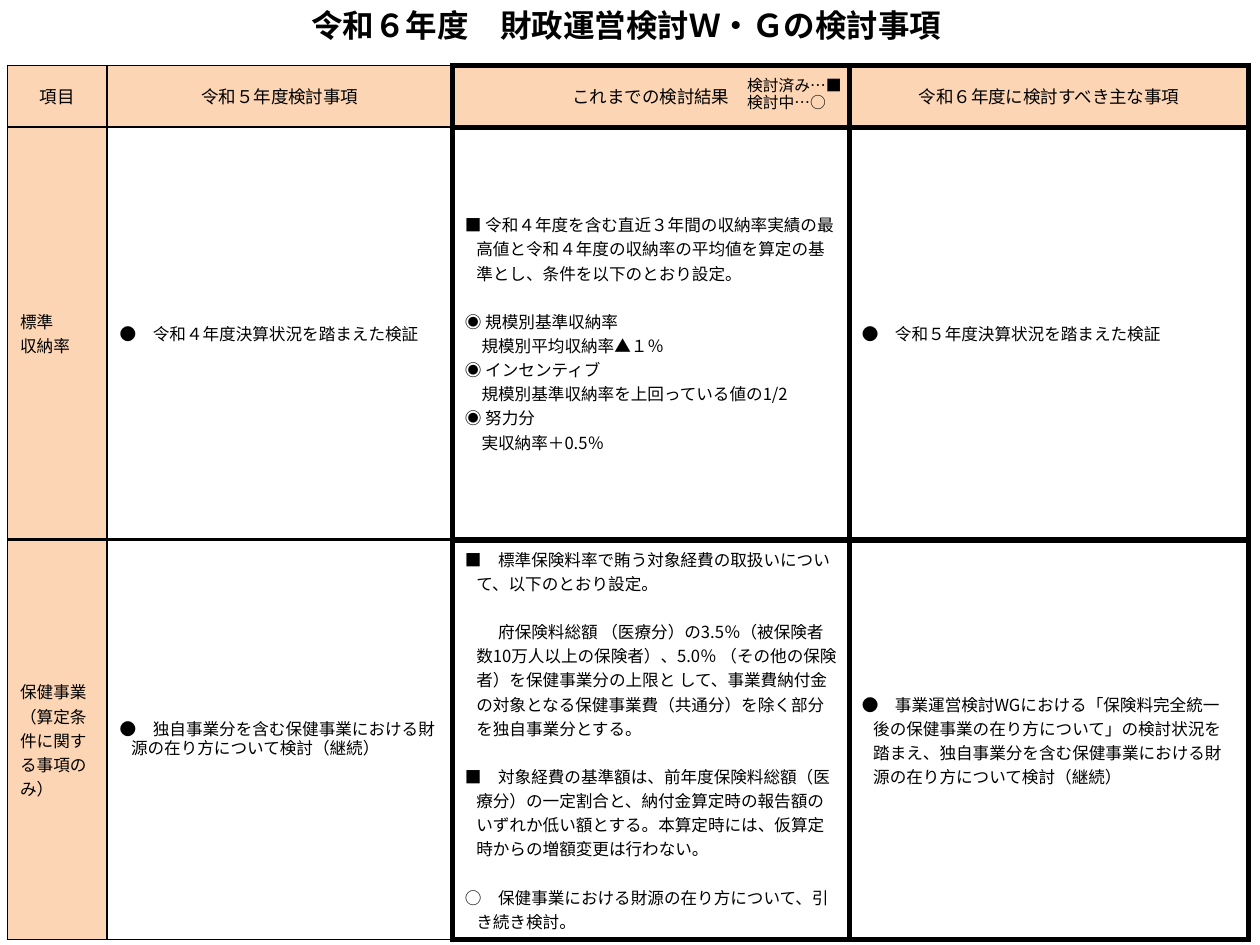
from lxml.etree import SubElement
from pptx import Presentation
from pptx.dml.color import RGBColor
from pptx.enum.text import MSO_ANCHOR, MSO_AUTO_SIZE, PP_ALIGN
from pptx.oxml.ns import qn
from pptx.util import Pt

FONT = "Noto Sans CJK JP"
BLACK = RGBColor(0x00, 0x00, 0x00)
PEACH = RGBColor(0xFC, 0xD5, 0xB5)
THIN, THICK = 1, 3
BODY_SIZE = 9.5
HANGING = 6.5
BLANK_LINE = 13.75

TITLE = "令和６年度　財政運営検討Ｗ・Ｇの検討事項"
LEGEND = ["検討済み…■", "検討中…○"]
HEADERS = ["項目", "令和５年度検討事項", "これまでの検討結果", "令和６年度に検討すべき主な事項"]

# A paragraph is its text, or its text with a dict of format changes.
GAP = {"space_before": BLANK_LINE}
DETAIL = {"first_line": 3}
COLLECTION_RATE = [
    ["標準", "収納率"],
    ["●　令和４年度決算状況を踏まえた検証"],
    [
        "■ 令和４年度を含む直近３年間の収納率実績の最高値と令和４年度の収納率の平均値を算定の基準とし、条件を以下のとおり設定。",
        ("◉ 規模別基準収納率", GAP),
        ("規模別平均収納率▲１％", DETAIL),
        "◉ インセンティブ",
        ("規模別基準収納率を上回っている値の1/2", DETAIL),
        "◉ 努力分",
        ("実収納率＋0.5％", DETAIL),
    ],
    ["●　令和５年度決算状況を踏まえた検証"],
]
HEALTH_PROGRAMS = [
    ["保健事業", "（算定条件に関する事項のみ）"],
    [("●　独自事業分を含む保健事業における財源の在り方について検討（継続）", {"line_spacing": 11})],
    [
        "■　標準保険料率で賄う対象経費の取扱いについて、以下のとおり設定。",
        ("府保険料総額 （医療分）の3.5％（被保険者数10万人以上の保険者）、5.0％ （その他の保険者）を"
         "保健事業分の上限と して、事業費納付金の対象となる保健事業費（共通分）を除く部分を独自事業分とする。",
         {"first_line": 12.5, **GAP}),
        ("■　対象経費の基準額は、前年度保険料総額（医療分）の一定割合と、納付金算定時の報告額の"
         "いずれか低い額とする。本算定時には、仮算定時からの増額変更は行わない。", GAP),
        ("○　保健事業における財源の在り方について、引き続き検討。", GAP),
    ],
    ["●　事業運営検討WGにおける「保険料完全統一後の保健事業の在り方について」の検討状況を踏まえ、"
     "独自事業分を含む保健事業における財源の在り方について検討（継続）"],
]

TABLE_LEFT = 4.3
COLUMN_WIDTHS = [56.9, 197.3, 226.8, 228.2]
TABLES = [
    {"top": 37.4, "row_heights": [35.3, 235.4], "rows": [[[text] for text in HEADERS], COLLECTION_RATE]},
    {"top": 308.9, "row_heights": [189.4], "rows": [HEALTH_PROGRAMS]},
]


def write_paragraph(paragraph, text, size=BODY_SIZE, bold=False, align=PP_ALIGN.LEFT,
                    margin=0, first_line=0, space_before=0, line_spacing=None):
    properties = paragraph._p.get_or_add_pPr()
    properties.set("marL", str(Pt(margin)))
    properties.set("indent", str(Pt(first_line)))
    paragraph.alignment = align
    paragraph.space_before = Pt(space_before)
    if line_spacing:
        paragraph.line_spacing = Pt(line_spacing)
    run = paragraph.add_run()
    run.text = text
    run.font.size = Pt(size)
    run.font.bold = bold
    run.font.color.rgb = BLACK
    run.font.name = FONT
    SubElement(run._r.get_or_add_rPr(), qn("a:ea"), typeface=FONT)


def write_text(frame, items, **text_format):
    frame.vertical_anchor = MSO_ANCHOR.MIDDLE
    frame.word_wrap = True
    for index, item in enumerate(items):
        text, changes = (item, {}) if isinstance(item, str) else item
        paragraph = frame.add_paragraph() if index else frame.paragraphs[0]
        write_paragraph(paragraph, text, **{**text_format, **changes})


def set_borders(cell, widths):
    """Draw black borders; widths maps each side (L, R, T, B) to points."""
    properties = cell._tc.get_or_add_tcPr()
    for side in "LRTB":
        line = SubElement(properties, qn(f"a:ln{side}"), w=str(Pt(widths[side])))
        fill = SubElement(line, qn("a:solidFill"))
        SubElement(fill, qn("a:srgbClr"), val=str(BLACK))


def format_cell(cell, items, column, is_header):
    widths = dict.fromkeys("LRTB", THIN if column < 2 else THICK)
    if column == 1:
        widths["R"] = THICK
    set_borders(cell, widths)
    if is_header or column == 0:
        cell.fill.solid()
        cell.fill.fore_color.rgb = PEACH
    else:
        cell.fill.background()
    if is_header:
        text_format = {"size": 10, "align": PP_ALIGN.CENTER}
    elif column:
        text_format = {"margin": HANGING, "first_line": -HANGING}
    else:
        text_format = {}
    write_text(cell.text_frame, items, **text_format)
    cell.vertical_anchor = MSO_ANCHOR.MIDDLE


def add_review_table(slide, top, row_heights, rows):
    table = slide.shapes.add_table(
        len(rows), len(COLUMN_WIDTHS), Pt(TABLE_LEFT), Pt(top),
        Pt(sum(COLUMN_WIDTHS)), Pt(sum(row_heights))).table
    table.first_row = False
    table.horz_banding = False
    for column, width in zip(table.columns, COLUMN_WIDTHS):
        column.width = Pt(width)
    for row_index, (height, row) in enumerate(zip(row_heights, rows)):
        table.rows[row_index].height = Pt(height)
        for column_index, items in enumerate(row):
            is_header = items[0] in HEADERS
            format_cell(table.cell(row_index, column_index), items, column_index, is_header)


def main():
    presentation = Presentation()
    presentation.slide_width, presentation.slide_height = Pt(720), Pt(540)
    slide = presentation.slides.add_slide(presentation.slide_layouts[5])

    title = slide.shapes.title
    title.left, title.top, title.width, title.height = Pt(3.6), Pt(-4.3), Pt(708.5), Pt(36.7)
    write_text(title.text_frame, [TITLE], size=18, bold=True, align=PP_ALIGN.CENTER)
    title.text_frame.auto_size = MSO_AUTO_SIZE.NONE

    for table in TABLES:
        add_review_table(slide, **table)

    legend = slide.shapes.add_textbox(Pt(419.8), Pt(39.6), Pt(70.6), Pt(28.8))
    write_text(legend.text_frame, LEGEND, size=9, line_spacing=10)

    presentation.save("out.pptx")


if __name__ == "__main__":
    main()
